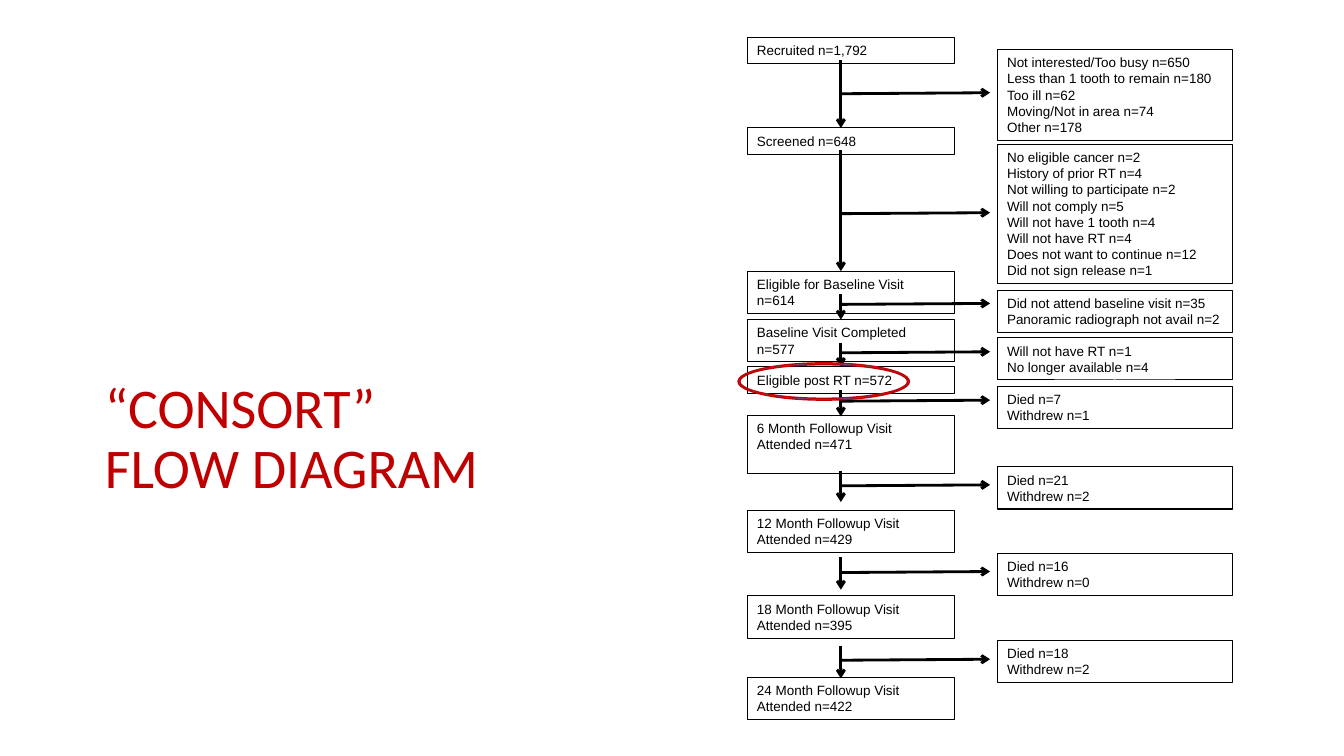
from lxml import etree
from pptx import Presentation, util as u
from pptx.dml.color import RGBColor
from pptx.enum import shapes, text
from pptx.oxml.ns import qn

PX = 9144
COLORS = {"red": "C00000", "black": "000000", "blue": "4472C4"}

STAGE_LEFT, STAGE_WIDTH = 741, 206
REASON_LEFT, REASON_WIDTH = 989, 233
TRUNK_X, BRANCH_END_X = 834, 982
LINE_HEIGHT, BOX_PADDING = 16, 10

STAGES = [
    ("Recruited n=1,792", 37, 1),
    ("Screened n=648", 127, 1),
    ("Eligible for Baseline Visit\vn=614", 269, 2),
    ("Baseline Visit Completed\vn=577", 317, 2),
    ("Eligible post RT n=572", 364, 1),
    ("6 Month Followup Visit\nAttended n=471", 412, 3),
    ("12 Month Followup Visit\nAttended n=429", 506, 2),
    ("18 Month Followup Visit\nAttended n=395", 591, 2),
    ("24 Month Followup Visit\nAttended n=422", 672, 2),
]

EXCLUSIONS = [
    (49, ["Not interested/Too busy n=650", "Less than 1 tooth to remain n=180",
          "Too ill n=62", "Moving/Not in area n=74", "Other n=178"]),
    (143, ["No eligible cancer n=2", "History of prior RT n=4",
           "Not willing to participate n=2", "Will not comply n=5",
           "Will not have 1 tooth n=4", "Will not have RT n=4",
           "Does not want to continue n=12", "Did not sign release n=1"]),
    (288, ["Did not attend baseline visit n=35", "Panoramic radiograph not avail n=2"]),
    (335, ["Will not have RT n=1", "No longer available n=4"]),
    (383, ["Died n=7", "Withdrew n=1"]),
    (463, ["Died n=21", "Withdrew n=2"]),
    (549, ["Died n=16", "Withdrew n=0"]),
    (635, ["Died n=18", "Withdrew n=2"]),
]

TRUNK_ARROWS = [(60, 127), (149, 269), (292, 317), (340, 364),
                (387, 413), (467, 498), (553, 585), (641, 673)]
BRANCH_YS = [93, 212, 302, 350, 398, 482, 568, 655]


def px(*lengths):
    return [length * PX for length in lengths]


def color(name):
    return RGBColor.from_string(COLORS[name])


def write_text(shape, content, *, font, size, ink="black",
               anchor=text.MSO_ANCHOR.TOP, line_spacing=None):
    frame = shape.text_frame
    frame.text = content
    frame.word_wrap = True
    frame.auto_size = text.MSO_AUTO_SIZE.NONE
    frame.vertical_anchor = anchor
    for paragraph in frame.paragraphs:
        paragraph.alignment = text.PP_ALIGN.LEFT
        if line_spacing:
            paragraph.line_spacing = line_spacing
        for run in paragraph.runs:
            run.font.name = font
            run.font.size = u.Pt(size)
            run.font.color.rgb = color(ink)


def add_title(slide, content):
    title = slide.shapes.title
    title.left, title.top, title.width, title.height = px(94, 375, 498, 127)
    write_text(title, content, font="Calibri", size=40, ink="red",
               anchor=text.MSO_ANCHOR.BOTTOM, line_spacing=0.9)


def add_box(slide, content, left, top, width, lines):
    height = BOX_PADDING + LINE_HEIGHT * lines
    box = slide.shapes.add_shape(shapes.MSO_SHAPE.RECTANGLE,
                                 *px(left, top, width, height))
    box.shadow.inherit = False
    box.fill.background()
    box.line.color.rgb = color("black")
    box.line.width = u.Pt(0.75)
    write_text(box, content, font="Arial", size=9.6)


def add_arrow(slide, start_x, start_y, end_x, end_y):
    arrow = slide.shapes.add_connector(shapes.MSO_CONNECTOR.STRAIGHT,
                                       *px(start_x, start_y, end_x, end_y))
    arrow.line.color.rgb = color("black")
    arrow.line.width = u.Pt(2)
    etree.SubElement(arrow.line._get_or_add_ln(), qn("a:tailEnd"), type="arrow")
    etree.SubElement(arrow._element.spPr, qn("a:effectLst"))


def add_highlight(slide):
    ring = slide.shapes.add_shape(shapes.MSO_SHAPE.DONUT, *px(732, 360, 170, 37))
    ring.adjustments[0] = 0.05
    ring.shadow.inherit = False
    ring.fill.solid()
    ring.fill.fore_color.rgb = color("blue")
    ring.line.color.rgb = color("red")
    ring.line.width = u.Pt(1)


def main():
    presentation = Presentation()
    presentation.slide_width, presentation.slide_height = px(1333, 750)
    slide = presentation.slides.add_slide(presentation.slide_layouts[5])
    add_title(slide, "“CONSORT”\vFLOW DIAGRAM")
    for label, top, lines in STAGES:
        add_box(slide, label, STAGE_LEFT, top, STAGE_WIDTH, lines)
    for top, reasons in EXCLUSIONS:
        add_box(slide, "\n".join(reasons), REASON_LEFT, top, REASON_WIDTH, len(reasons))
    for start, end in TRUNK_ARROWS:
        add_arrow(slide, TRUNK_X, start, TRUNK_X, end)
    for y in BRANCH_YS:
        add_arrow(slide, TRUNK_X, y, BRANCH_END_X, y - 1)
    add_highlight(slide)
    presentation.save("out.pptx")


if __name__ == "__main__":
    main()
